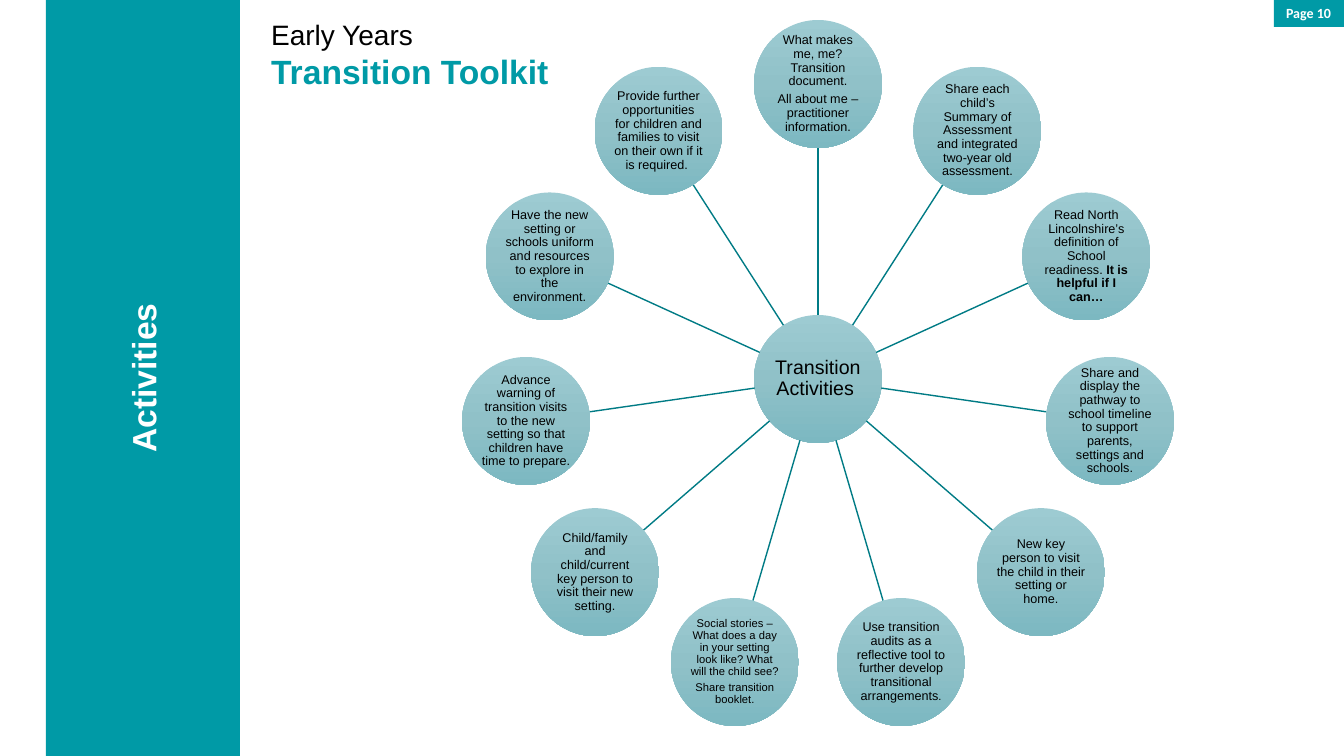
import copy
import dataclasses
import math

import pptx
import pptx.dml.color
import pptx.enum.shapes
import pptx.enum.text
import pptx.oxml.ns
import pptx.util

ALIGN = pptx.enum.text.PP_ALIGN
ANCHOR = pptx.enum.text.MSO_ANCHOR
SHAPE = pptx.enum.shapes.MSO_SHAPE


@dataclasses.dataclass(frozen=True)
class Theme:
    teal: str = "009AA6"
    spoke: str = "007B85"
    white: str = "FFFFFF"
    black: str = "000000"
    shades: tuple = ("9DCBD2", "90C1C8", "7CB8C1")
    font: str = "Arial"
    tagfont: str = "Calibri"
    head: int = 24
    lead: int = 20
    hub: int = 14
    tag: int = 10
    note: int = 9
    small: int = 8


def px(count):
    return pptx.util.Emu(round(count * 12192000 / 1344))


def rgb(code):
    return pptx.dml.color.RGBColor.from_string(code)


class Board:
    def __init__(self, slide, theme):
        self.slide = slide
        self.theme = theme

    def run(self, para, text, size, color, bold=False, font=None):
        run = para.add_run()
        run.text = text
        run.font.name = font or self.theme.font
        run.font.size = pptx.util.Pt(size)
        run.font.bold = bold
        run.font.color.rgb = rgb(color)

    def title(self, box, rows):
        shape = self.slide.shapes.title
        shape.left, shape.top, shape.width, shape.height = map(px, box)
        frame = shape.text_frame
        frame.word_wrap = True
        frame.auto_size = pptx.enum.text.MSO_AUTO_SIZE.NONE
        frame.vertical_anchor = ANCHOR.TOP
        for spot, row in enumerate(rows):
            para = frame.add_paragraph() if spot else frame.paragraphs[0]
            para.alignment = ALIGN.LEFT
            self.run(para, *row)

    def shape(self, kind, box):
        shape = self.slide.shapes.add_shape(kind, *map(px, box))
        shape.shadow.inherit = False
        shape.line.fill.background()
        shape.text_frame.word_wrap = True
        return shape

    def panel(self, box, text, size, align, anchor, font=None, turn=None):
        shape = self.shape(SHAPE.RECTANGLE, box)
        shape.fill.solid()
        shape.fill.fore_color.rgb = rgb(self.theme.teal)
        frame = shape.text_frame
        frame.vertical_anchor = anchor
        if turn:
            frame._txBody.bodyPr.set("vert", turn)
        para = frame.paragraphs[0]
        para.alignment = align
        self.run(para, text, size, self.theme.white, True, font)

    def ball(self, mid, girth, paras):
        x, y = mid
        shape = self.shape(SHAPE.OVAL, (x - girth / 2, y - girth / 2, girth, girth))
        fill = shape.fill
        fill.gradient()
        fill.gradient_angle = 270
        stops = shape._element.spPr.find(".//" + pptx.oxml.ns.qn("a:gsLst"))
        stops.insert(1, copy.deepcopy(stops[0]))
        for spot, (stop, shade) in enumerate(zip(fill.gradient_stops, self.theme.shades)):
            stop.position = spot / 2
            stop.color.rgb = rgb(shade)
        frame = shape.text_frame
        frame.vertical_anchor = ANCHOR.MIDDLE
        frame.margin_left = frame.margin_right = px(1)
        frame.margin_top = frame.margin_bottom = px(1)
        for spot, runs in enumerate(paras):
            para = frame.add_paragraph() if spot else frame.paragraphs[0]
            para.alignment = ALIGN.CENTER
            para.line_spacing = 0.9
            para.space_after = pptx.util.Pt(runs[0][1] * 0.35)
            for text, size, bold in runs:
                self.run(para, text, size, self.theme.black, bold)

    def spoke(self, start, end):
        line = self.slide.shapes.add_connector(
            pptx.enum.shapes.MSO_CONNECTOR.STRAIGHT, *map(px, (*start, *end)))
        line.line.color.rgb = rgb(self.theme.spoke)
        line.line.width = pptx.util.Pt(1)
        line._element.spPr.append(pptx.oxml.parse_xml(
            f'<a:effectLst {pptx.oxml.ns.nsdecls("a")}/>'))


def note(*texts, size=Theme.note):
    return [[(text, size, False)] for text in texts]


NOTES = [
    note("What makes me, me? Transition document.",
         "All about me – practitioner information."),
    note("Share each child’s Summary of Assessment and integrated two-year old assessment."),
    [[("Read North Lincolnshire’s definition of School readiness. ", Theme.note, False),
      ("It is helpful if I can…", Theme.note, True)]],
    note("Share and display the pathway to school timeline to support parents, "
         "settings and schools."),
    note("New key person to visit the child in their setting or home."),
    [[("Use transition audits as a reflective tool to further develop "
       "transitional arrangements", Theme.note, False),
      (".", Theme.small, False)]],
    note("Social stories – What does a day in your setting look like? "
         "What will the child see?",
         "Share transition booklet.", size=Theme.small),
    note("Child/family and child/current key person to visit their new setting."),
    note("Advance warning of transition visits to the new setting so that "
         "children have time to prepare."),
    note("Have the new setting or schools uniform and resources to explore "
         "in the environment."),
    note("Provide further opportunities for children and families to visit "
         "on their own if it is required. "),
]
HUB = (818, 379)
REACH = 295
GIRTH = 128


def orbit(angle, reach):
    return HUB[0] + reach * math.sin(angle), HUB[1] - reach * math.cos(angle)


def main():
    deck = pptx.Presentation()
    deck.slide_width, deck.slide_height = px(1344), px(756)
    theme = Theme()
    board = Board(deck.slides.add_slide(deck.slide_layouts[5]), theme)
    board.panel((1274, 0, 70, 27), "Page 10 ", theme.tag,
                ALIGN.RIGHT, ANCHOR.TOP, font=theme.tagfont)
    board.panel((46, 0, 194, 756), "Activities", theme.head,
                ALIGN.CENTER, ANCHOR.MIDDLE, turn="vert270")
    board.title((261, 12, 553, 85), [
        ("Early Years", theme.lead, theme.black),
        ("Transition Toolkit", theme.head, theme.teal, True)])
    board.ball(HUB, GIRTH, note("Transition Activities ", size=theme.hub))
    for spot, paras in enumerate(NOTES):
        angle = math.tau * spot / len(NOTES)
        board.spoke(orbit(angle, GIRTH / 2), orbit(angle, REACH - GIRTH / 2))
        board.ball(orbit(angle, REACH), GIRTH, paras)
    deck.save("out.pptx")


if __name__ == "__main__":
    main()
